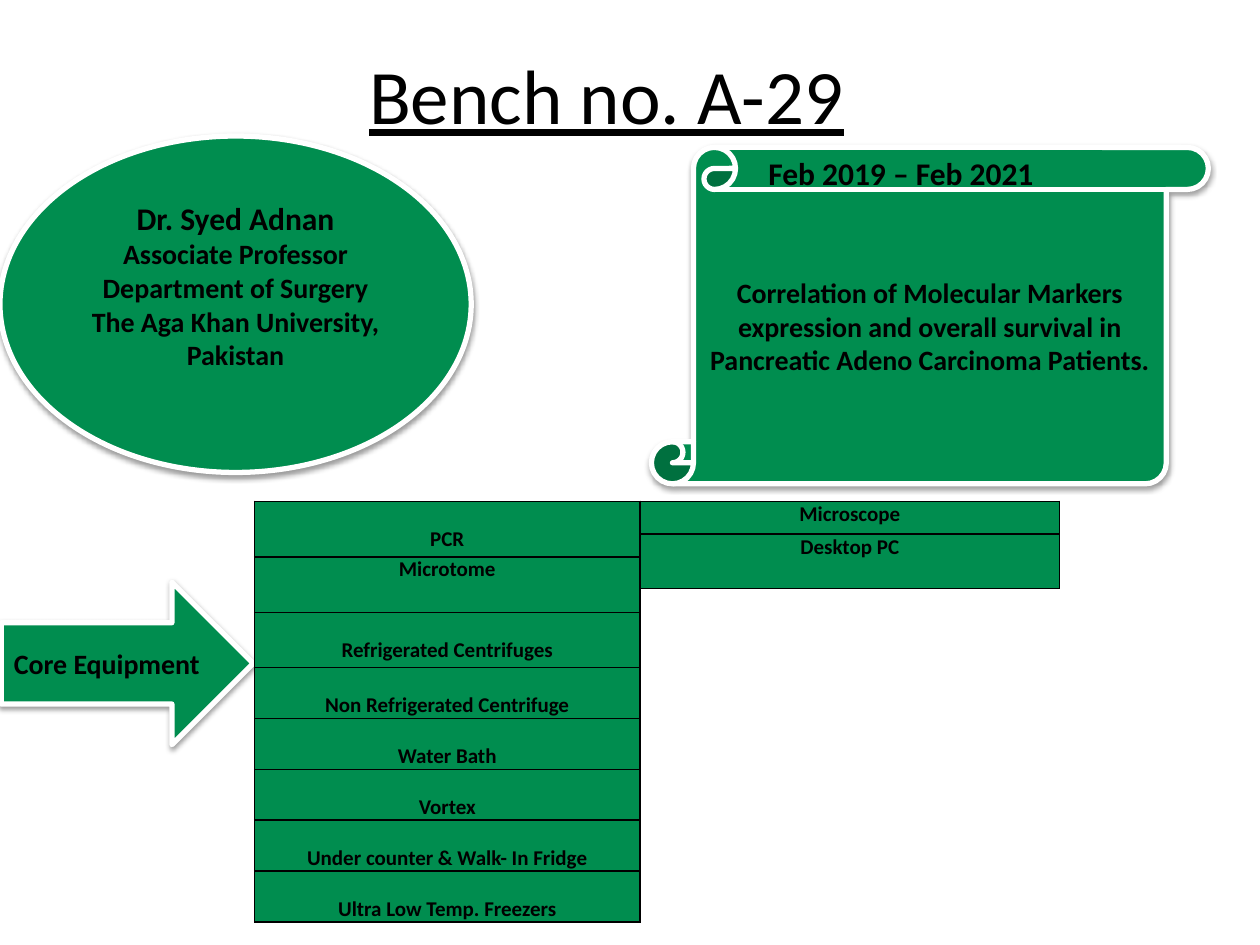
from lxml.etree import SubElement
from pptx import Presentation
from pptx.dml.color import RGBColor
from pptx.enum.shapes import MSO_SHAPE as Preset
from pptx.enum.text import MSO_ANCHOR as Anchor, PP_ALIGN as Align
from pptx.oxml import parse_xml
from pptx.oxml.ns import nsdecls, qn
from pptx.util import Inches, Pt

# Content
TITLE = "Bench no. A-29"
PERIOD = "Feb 2019 – Feb 2021"
RESEARCHER = [
    ("Dr. Syed Adnan", "large"),
    ("Associate Professor Department of Surgery The Aga Khan University, Pakistan", "body"),
]
PROJECT = [("Correlation of Molecular Markers expression and overall survival in "
            "Pancreatic Adeno Carcinoma Patients.", "body")]
EQUIPMENT_LABEL = [("Core Equipment", "body")]

# Equipment rows: name, row height, gap above the name
LAB_EQUIPMENT = [
    ("PCR", 0.44, 0.2),
    ("Microtome", 0.44, 0),
    ("Refrigerated Centrifuges", 0.44, 0.2),
    ("Non Refrigerated Centrifuge", 0.4, 0.2),
    ("Water Bath", 0.4, 0.2),
    ("Vortex", 0.4, 0.2),
    ("Under counter & Walk- In Fridge", 0.4, 0.2),
    ("Ultra Low Temp. Freezers", 0.4, 0.2),
]
DESK_EQUIPMENT = [("Microscope", 0.26, 0), ("Desktop PC", 0.43, 0)]

THEME = {
    "font": "Calibri",
    "green": RGBColor(0x00, 0x8D, 0x4F),
    "white": RGBColor(0xFF, 0xFF, 0xFF),
    "black": RGBColor(0x00, 0x00, 0x00),
    "title": Pt(44), "large": Pt(18), "body": Pt(16), "cell": Pt(12),
    "outline": Pt(3), "border": Pt(1),
}

# Panels: preset, box, lines of text, space kept free below the text
PANELS = [
    (Preset.OVAL, (0, 1.08, 3.74, 2.67), RESEARCHER, 0.35),
    (Preset.RIGHT_ARROW, (0.01, 4.62, 2, 1.29), EQUIPMENT_LABEL, 0.05),
    (Preset.VERTICAL_SCROLL, (5.17, 1.17, 4.42, 2.67), PROJECT, 0.05),
]
# Tables: left, top, width, rows
TABLES = [(2.02, 3.98, 3.06, LAB_EQUIPMENT), (5.08, 3.98, 3.33, DESK_EQUIPMENT)]


def set_all(target, values):
    for name, value in values.items():
        setattr(target, name, value)


def box_of(left, top, width, height):
    return dict(left=Inches(left), top=Inches(top), width=Inches(width), height=Inches(height))


def write(frame, lines, align, bold=True, underline=False):
    for index, (words, size) in enumerate(lines):
        paragraph = frame.paragraphs[0] if index == 0 else frame.add_paragraph()
        paragraph.alignment = align
        run = paragraph.add_run()
        run.text = words
        set_all(run.font, dict(name=THEME["font"], size=THEME[size], bold=bold,
                               underline=underline))
        run.font.color.rgb = THEME["black"]


def paint(target):
    target.fill.solid()
    target.fill.fore_color.rgb = THEME["green"]


def add_shadow(shape):
    shape._element.spPr.append(parse_xml(
        f'<a:effectLst {nsdecls("a")}><a:outerShdw blurRad="{Pt(3.1)}" dist="{Pt(1.6)}" '
        'dir="5400000" rotWithShape="0"><a:srgbClr val="000000"><a:alpha val="38000"/>'
        '</a:srgbClr></a:outerShdw></a:effectLst>'))


def add_panel(slide, preset, box, lines, bottom):
    panel = slide.shapes.add_shape(preset, **box_of(*box))
    paint(panel)
    panel.line.color.rgb = THEME["white"]
    panel.line.width = THEME["outline"]
    add_shadow(panel)
    set_all(panel.text_frame, dict(word_wrap=True, vertical_anchor=Anchor.MIDDLE,
                                   margin_bottom=Inches(bottom)))
    write(panel.text_frame, lines, Align.CENTER)


def add_borders(cell):
    properties = cell._tc.get_or_add_tcPr()
    for side in ("lnL", "lnR", "lnT", "lnB"):
        border = SubElement(properties, qn(f"a:{side}"), w=str(THEME["border"]))
        fill = SubElement(border, qn("a:solidFill"))
        SubElement(fill, qn("a:srgbClr"), val=str(THEME["black"]))


def add_equipment(slide, left, top, width, rows):
    height = sum(row[1] for row in rows)
    table = slide.shapes.add_table(len(rows), 1, **box_of(left, top, width, height)).table
    set_all(table, dict(first_row=False, horz_banding=False))
    for index, (name, row_height, gap) in enumerate(rows):
        table.rows[index].height = Inches(row_height)
        cell = table.cell(index, 0)
        set_all(cell, dict(margin_left=Inches(0.07), margin_right=Inches(0.07),
                           margin_top=Inches(gap), margin_bottom=0))
        add_borders(cell)
        paint(cell)
        write(cell.text_frame, [(name, "cell")], Align.CENTER)


def main():
    deck = Presentation()
    set_all(deck, dict(slide_width=Inches(10), slide_height=Inches(7.5)))
    slide = deck.slides.add_slide(deck.slide_layouts[5])

    # Title
    title = slide.shapes.title
    set_all(title, box_of(2.83, 0.33, 5, 1.58))
    title.text_frame.vertical_anchor = Anchor.TOP
    write(title.text_frame, [(TITLE, "title")], Align.LEFT, bold=False, underline=True)

    # Researcher, equipment label and project
    for panel in PANELS:
        add_panel(slide, *panel)

    # Equipment lists
    for table in TABLES:
        add_equipment(slide, *table)

    # Project period, on top of the scroll
    period = slide.shapes.add_textbox(**box_of(6, 1.17, 3.5, 0.4))
    period.text_frame.word_wrap = True
    write(period.text_frame, [(PERIOD, "large")], Align.LEFT)

    deck.save("out.pptx")


if __name__ == "__main__":
    main()
